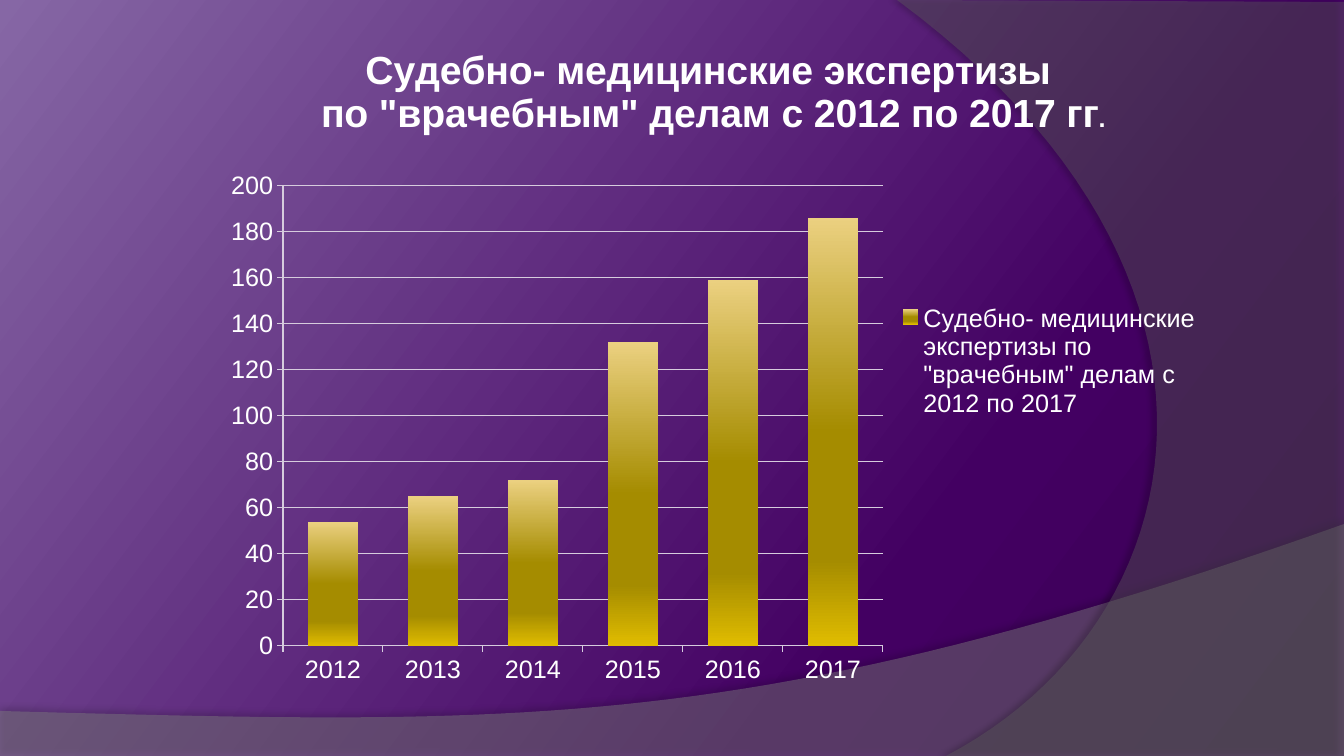
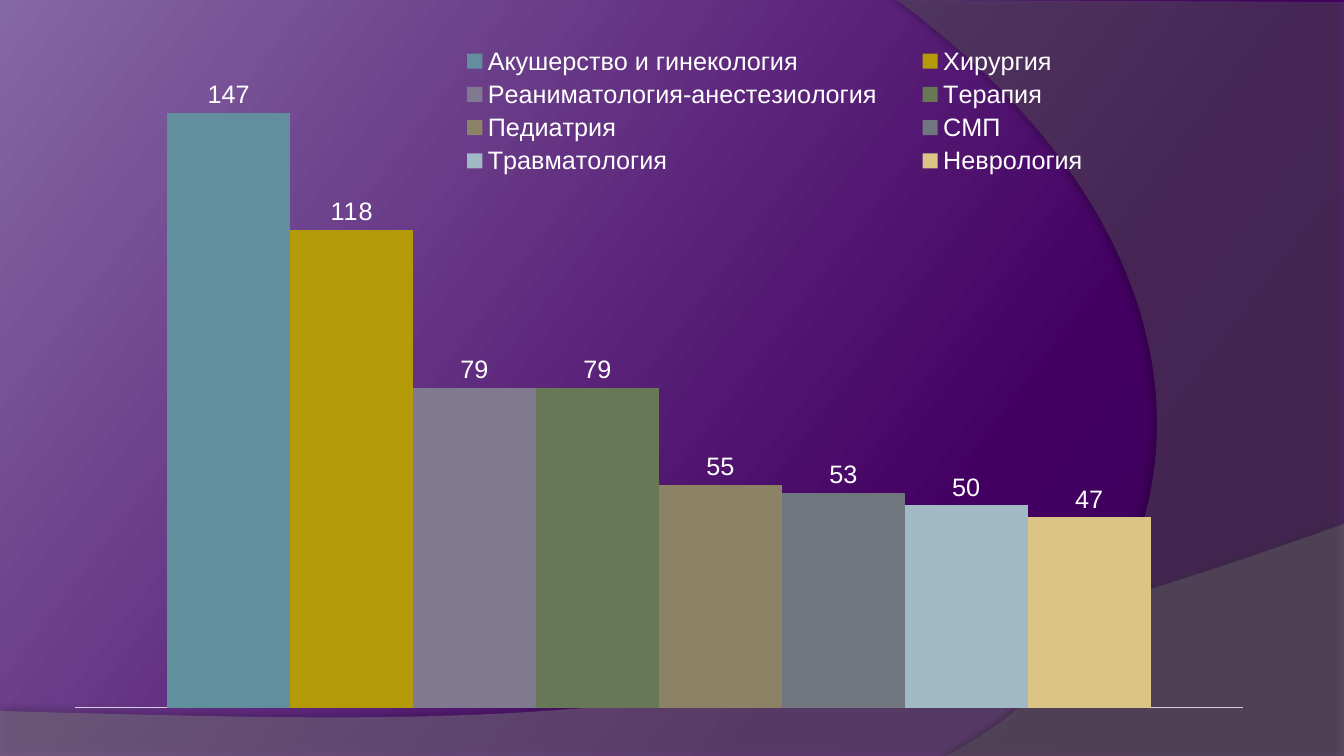
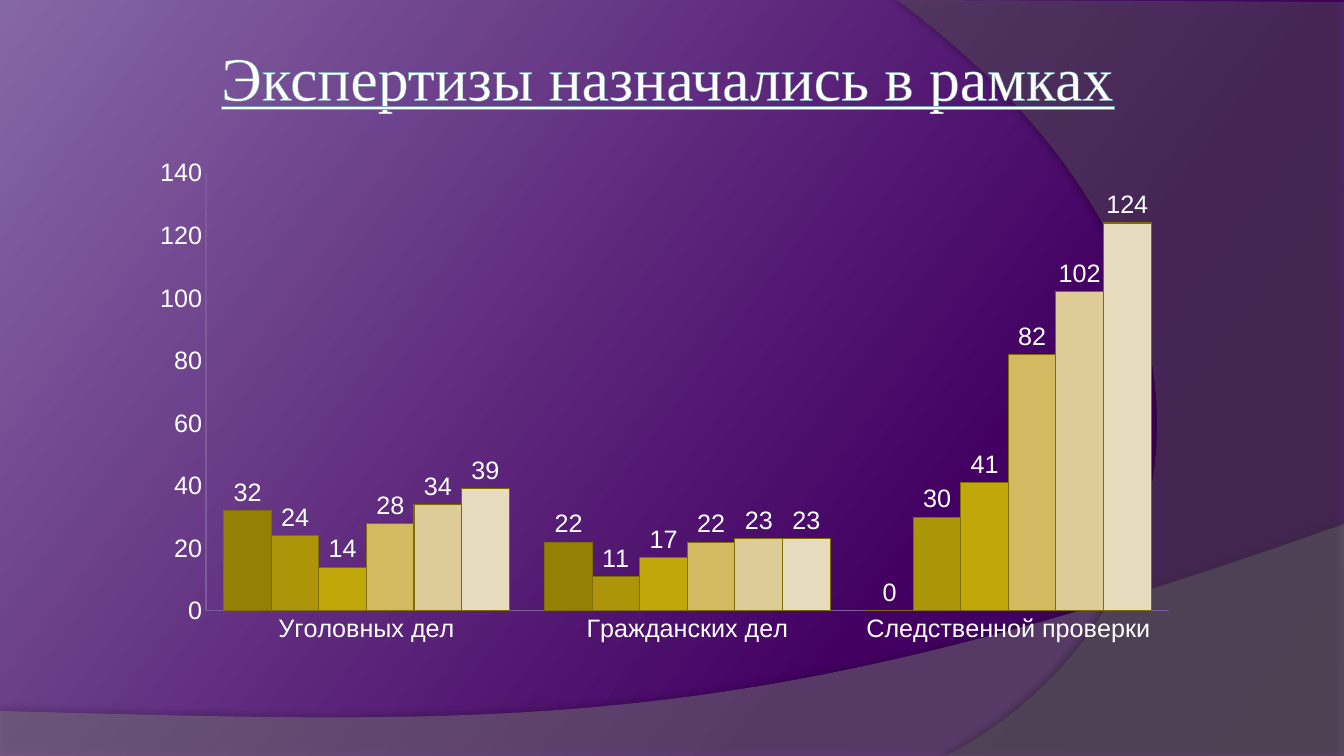
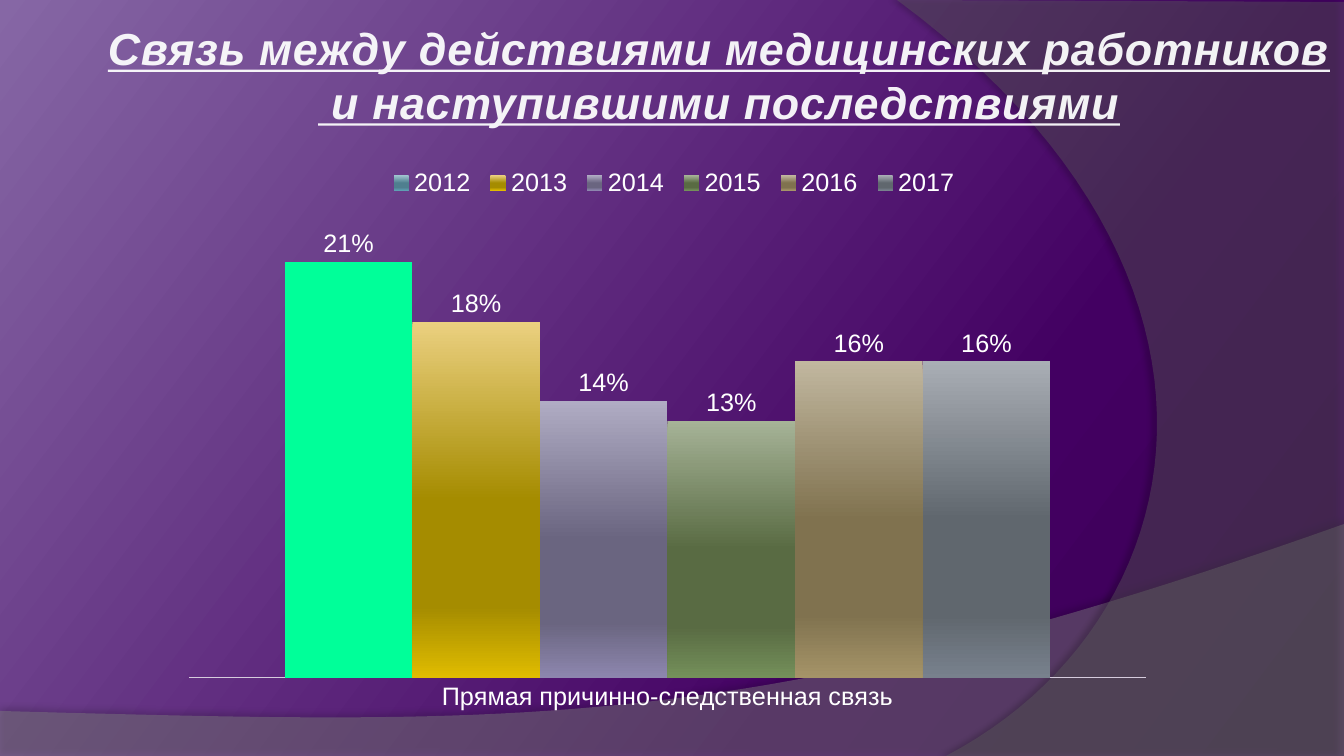
from dataclasses import dataclass
from typing import Optional, Sequence

from lxml import etree
from pptx import Presentation
from pptx import util as u
from pptx.chart.data import CategoryChartData
from pptx.dml.color import RGBColor
from pptx.enum import chart as ch, text
from pptx.oxml.ns import qn

SCALE = 914400 / 100.8
WIDTH, HEIGHT = 1344, 756
TITLE_ONLY, BLANK = 5, 6


def px(n: float) -> u.Emu:
    return u.Emu(round(n * SCALE))


@dataclass(frozen=True)
class Theme:
    font: str = "Arial"
    serif: str = "Times New Roman"
    white: str = "FFFFFF"
    soft_white: str = "FCFDFD"
    outline: str = "6EA0B0"
    dark_outline: str = "162023"
    axis: str = "D6CCDD"
    dim_axis: str = "7E5A9A"
    bar_edge: str = "7F6D00"
    highlight: str = "00FF99"
    backdrop: tuple = ((0, "390052"), (30, "430062"), (100, "8667A5"))
    backdrop_angle: int = 143
    label_size: int = 18
    chart_title_size: int = 28
    heading_size: int = 32
    title_size: int = 44


T = Theme()


@dataclass(frozen=True)
class Box:
    x: int
    y: int
    w: int
    h: int


@dataclass(frozen=True)
class Band:
    corners: Sequence[tuple]
    curve: Sequence[tuple]
    color: str
    alpha: int
    shadow_alpha: int
    shadow_dist: float
    shadow_dir: int


@dataclass(frozen=True)
class Series:
    name: str
    values: Sequence[float]
    colors: Sequence[str]


@dataclass(frozen=True)
class ChartSpec:
    box: Box
    plot: Box
    categories: Sequence[str]
    series: Sequence[Series]
    gap: int
    top: float
    step: float
    axis_color: str = T.axis
    legend: Optional[Box] = None
    legend_side: ch.XL_LEGEND_POSITION = ch.XL_LEGEND_POSITION.TOP
    fmt: str = "General"
    labels: bool = True
    scale: bool = False
    grid: bool = False
    category_names: bool = True
    edge: Optional[str] = None


@dataclass(frozen=True)
class TitleSpec:
    box: Box
    lines: Sequence[str]
    font: str
    size: int
    color: str
    align: text.PP_ALIGN
    outline: str
    outline_width: float
    bold: bool = False
    italic: bool = False
    wrap: bool = True
    alpha: int = 100
    outline_alpha: int = 100
    spacing: int = 0


BANDS = (
    Band([(0, 711), (0, 757), (1344, 757)],
         [(1344, 524), (751, 735), (525, 725), (0, 711)],
         "7F7F7F", 45, 35, 3.5, 270),
    Band([(1344, 2), (1344, 756)],
         [(946, 756), (1198, 624), (1273, 277), (897, 0)],
         "5E5E5E", 40, 45, 4, 180),
)

GOLD = ("EBD080", "A58C00", "E0BC00")
YEARS = ("2012", "2013", "2014", "2015", "2016", "2017")

BY_YEAR = ChartSpec(
    Box(211, 22, 1000, 676), Box(283, 186, 600, 460), YEARS,
    [Series('Судебно- медицинские экспертизы по "врачебным" делам с 2012 по 2017',
            (54, 65, 72, 132, 159, 186), GOLD)],
    gap=100, top=200, step=20, legend=Box(898, 300, 302, 122),
    legend_side=ch.XL_LEGEND_POSITION.RIGHT, labels=False, scale=True, grid=True)

BY_FIELD = ChartSpec(
    Box(50, 0, 1217, 756), Box(75, 60, 1168, 648), [" "],
    [Series(name, (value,), (color,)) for name, value, color in (
        ("Акушерство и гинекология", 147, "618F9E"),
        ("Хирургия", 118, "B49A09"),
        ("Реаниматология-анестезиология", 79, "7F7A90"),
        ("Терапия", 79, "687756"),
        ("Педиатрия", 55, "8C8265"),
        ("СМП", 53, "70757E"),
        ("Травматология", 50, "A1B9C5"),
        ("Неврология", 47, "DAC587"))],
    gap=150, top=160, step=20, legend=Box(430, 42, 690, 138), category_names=False)

BY_CASE = ChartSpec(
    Box(160, 144, 1031, 551), Box(205, 173, 964, 438),
    ["Уголовных дел", "Гражданских дел", "Следственной проверки"],
    [Series(f"Series {i}", values, (color,)) for i, (values, color) in enumerate((
        ((32, 22, 0), "958006"),
        ((24, 11, 30), "AD9509"),
        ((14, 17, 41), "C1A70A"),
        ((28, 22, 82), "D1BA62"),
        ((34, 23, 102), "DDCB98"),
        ((39, 23, 124), "E7DBBD")), 1)],
    gap=75, top=140, step=20, axis_color=T.dim_axis, scale=True, edge=T.bar_edge)

BY_LINK = ChartSpec(
    Box(168, 125, 997, 598), Box(189, 183, 957, 495),
    ["Прямая причинно-следственная связь"],
    [Series(year, (value,), colors) for year, value, colors in zip(
        YEARS, (0.21, 0.18, 0.14, 0.13, 0.16, 0.16), (
            ("A0C5D0", "4F7F8F", "5F9FB3"),
            GOLD,
            ("B0ACC4", "6A6580", "8D86AE"),
            ("A6B397", "596B43", "74905A"),
            ("C1B79F", "80724F", "A59468"),
            ("A9AEB5", "60676E", "78818D")))],
    gap=150, top=0.25, step=0.05, legend=Box(382, 166, 584, 34), fmt="0%")

CASE_TITLE = TitleSpec(
    Box(211, 34, 943, 85), ["Экспертизы назначались в рамках"], T.serif,
    T.title_size, T.white, text.PP_ALIGN.LEFT, T.outline, 0.8)

LINK_TITLE = TitleSpec(
    Box(93, 16, 1252, 119),
    ["Связь между действиями медицинских работников", " и наступившими последствиями"],
    T.font, T.heading_size, T.soft_white, text.PP_ALIGN.CENTER, T.dark_outline, 1.06,
    bold=True, italic=True, wrap=False, alpha=95, outline_alpha=6, spacing=50)


def rgb(color: str) -> RGBColor:
    return RGBColor.from_string(color)


def sub(parent, tag: str, **attrs):
    return etree.SubElement(parent, qn(tag), {k: str(v) for k, v in attrs.items()})


def add_color(parent, color: str, alpha: int = 100) -> None:
    clr = sub(parent, "a:srgbClr", val=color)
    if alpha < 100:
        sub(clr, "a:alpha", val=alpha * 1000)


def set_alpha(element, alpha: int) -> None:
    if alpha < 100:
        clr = element.find(qn("a:solidFill")).find(qn("a:srgbClr"))
        sub(clr, "a:alpha", val=alpha * 1000)


def set_gradient(fill, stops: Sequence[tuple], angle: int) -> None:
    fill.gradient()
    fill.gradient_angle = angle
    gs_list = fill.gradient_stops._gsLst
    for gs in list(gs_list):
        gs_list.remove(gs)
    for pos, color in stops:
        add_color(sub(gs_list, "a:gs", pos=pos * 1000), color)


def bezier(points: Sequence[tuple], steps: int = 48) -> list:
    p0, p1, p2, p3 = points

    def at(t: float) -> tuple:
        k = 1 - t
        return tuple(px(k**3 * a + 3 * k * k * t * b + 3 * k * t * t * c + t**3 * d)
                     for a, b, c, d in zip(p0, p1, p2, p3))

    return [at(i / steps) for i in range(steps + 1)]


def add_band(s, band: Band):
    points = [(px(x), px(y)) for x, y in band.corners] + bezier(band.curve)
    builder = s.shapes.build_freeform(*points[0])
    builder.add_line_segments(points[1:], close=True)
    sp = builder.convert_to_shape()
    sp.fill.solid()
    sp.fill.fore_color.rgb = rgb(band.color)
    sp.line.fill.background()
    sp.shadow.inherit = False
    sp_pr = sp._element.spPr
    set_alpha(sp_pr, band.alpha)
    shadow = sub(sp_pr.find(qn("a:effectLst")), "a:outerShdw", blurRad=u.Pt(4),
                 dist=u.Pt(band.shadow_dist), dir=band.shadow_dir * 60000,
                 algn="ctr", rotWithShape=0)
    add_color(shadow, "000000", band.shadow_alpha)
    return sp


def decorate_master(prs, s) -> None:
    master = prs.slide_master
    set_gradient(master.background.fill, T.backdrop, T.backdrop_angle)
    for i, band in enumerate(BANDS):
        sp = add_band(s, band)
        sp._element.nvSpPr.cNvPr.id = 100 + i
        master.shapes._spTree.insert(2 + i, sp._element)


def style_font(font, size: float, color: str = T.white, name: str = T.font,
               bold: bool = False) -> None:
    font.name, font.bold, font.size = name, bold, u.Pt(size)
    font.color.rgb = rgb(color)


def set_title(s, spec: TitleSpec) -> None:
    sp, box = s.shapes.title, spec.box
    sp.left, sp.top, sp.width, sp.height = map(px, (box.x, box.y, box.w, box.h))
    tf = sp.text_frame
    tf.auto_size = text.MSO_AUTO_SIZE.NONE
    tf.vertical_anchor = text.MSO_ANCHOR.TOP
    tf.word_wrap = spec.wrap
    for i, line in enumerate(spec.lines):
        p = tf.add_paragraph() if i else tf.paragraphs[0]
        p.alignment = spec.align
        r = p.add_run()
        r.text = line
        style_font(r.font, spec.size, spec.color, spec.font, spec.bold)
        r.font.italic = spec.italic
        r.font.underline = True
        r_pr = r.font._element
        set_alpha(r_pr, spec.alpha)
        if spec.spacing:
            r_pr.set("spc", str(spec.spacing))
        ln = sub(r_pr, "a:ln", w=u.Pt(spec.outline_width))
        add_color(sub(ln, "a:solidFill"), spec.outline, spec.outline_alpha)
        r_pr.insert(0, ln)


def set_layout(parent, index: int, area: Box, frame: Box, inner: bool = False) -> None:
    for old in parent.findall(qn("c:layout")):
        parent.remove(old)
    layout = sub(parent, "c:layout")
    manual = sub(layout, "c:manualLayout")
    if inner:
        sub(manual, "c:layoutTarget", val="inner")
    sub(manual, "c:xMode", val="edge")
    sub(manual, "c:yMode", val="edge")
    for key, value in (("x", (area.x - frame.x) / frame.w),
                       ("y", (area.y - frame.y) / frame.h),
                       ("w", area.w / frame.w), ("h", area.h / frame.h)):
        sub(manual, f"c:{key}", val=round(value, 4))
    parent.insert(index, layout)


def style_line(line, color: str) -> None:
    line.color.rgb = rgb(color)
    line.width = u.Pt(0.75)


def style_axes(chart, spec: ChartSpec) -> None:
    cat, val = chart.category_axis, chart.value_axis
    tick = ch.XL_TICK_MARK.OUTSIDE if spec.grid else ch.XL_TICK_MARK.NONE
    val.minimum_scale, val.maximum_scale, val.major_unit = 0, spec.top, spec.step
    val.visible = spec.scale
    val.has_major_gridlines = spec.grid
    if spec.grid:
        style_line(val.major_gridlines.format.line, spec.axis_color)
    for axis in (cat, val):
        axis.major_tick_mark = tick
        axis.minor_tick_mark = ch.XL_TICK_MARK.NONE
        style_line(axis.format.line, spec.axis_color)
    if not spec.category_names:
        cat.tick_label_position = ch.XL_TICK_LABEL_POSITION.NONE


def style_series(ser, item: Series, spec: ChartSpec) -> None:
    fill = ser.format.fill
    if len(item.colors) == 1:
        fill.solid()
        fill.fore_color.rgb = rgb(item.colors[0])
    else:
        high, mid, low = item.colors
        set_gradient(fill, ((0, high), (50, mid), (80, mid), (100, low)), 270)
    if spec.edge:
        style_line(ser.format.line, spec.edge)
    if spec.labels:
        labels = ser.data_labels
        labels.show_value = True
        labels.position = ch.XL_LABEL_POSITION.OUTSIDE_END
        labels.number_format = spec.fmt
        labels.number_format_is_linked = False
        style_font(labels.font, T.label_size)


def add_chart(s, spec: ChartSpec):
    data = CategoryChartData(number_format=spec.fmt)
    data.categories = spec.categories
    for item in spec.series:
        data.add_series(item.name, item.values)
    box = spec.box
    chart = s.shapes.add_chart(ch.XL_CHART_TYPE.COLUMN_CLUSTERED,
                               *map(px, (box.x, box.y, box.w, box.h)), data).chart
    style_font(chart.font, T.label_size)
    chart.has_title = False
    plot = chart.plots[0]
    plot.gap_width, plot.overlap, plot.vary_by_categories = spec.gap, 0, False
    style_axes(chart, spec)
    for ser, item in zip(plot.series, spec.series):
        style_series(ser, item, spec)
    set_layout(chart._chartSpace.chart.plotArea, 0, spec.plot, box, inner=True)
    chart.has_legend = spec.legend is not None
    if spec.legend:
        chart.legend.position = spec.legend_side
        chart.legend.include_in_layout = False
        style_font(chart.legend.font, T.label_size)
        set_layout(chart.legend._element, 1, spec.legend, box)
    return chart


def add_chart_title(chart, lines: Sequence[Sequence[tuple]], area: Box, frame: Box) -> None:
    chart.has_title = True
    tf = chart.chart_title.text_frame
    for i, runs in enumerate(lines):
        p = tf.add_paragraph() if i else tf.paragraphs[0]
        p.alignment = text.PP_ALIGN.CENTER
        for words, size in runs:
            r = p.add_run()
            r.text = words
            style_font(r.font, size, bold=True)
    set_layout(chart.chart_title._element, 1, area, frame)


def main() -> None:
    prs = Presentation()
    prs.slide_width, prs.slide_height = px(WIDTH), px(HEIGHT)
    layouts = prs.slide_layouts

    s = prs.slides.add_slide(layouts[BLANK])
    decorate_master(prs, s)
    chart = add_chart(s, BY_YEAR)
    add_chart_title(chart, [
        [("Судебно- медицинские экспертизы ", T.chart_title_size)],
        [('по "врачебным" делам с 2012 по 2017 гг', T.chart_title_size),
         (".", T.label_size)],
    ], Box(318, 45, 786, 88), BY_YEAR.box)

    s = prs.slides.add_slide(layouts[BLANK])
    add_chart(s, BY_FIELD)

    for title, spec in ((CASE_TITLE, BY_CASE), (LINK_TITLE, BY_LINK)):
        s = prs.slides.add_slide(layouts[TITLE_ONLY])
        set_title(s, title)
        chart = add_chart(s, spec)

    fill = chart.plots[0].series[0].points[0].format.fill
    fill.solid()
    fill.fore_color.rgb = rgb(T.highlight)
    prs.save("out.pptx")


if __name__ == "__main__":
    main()
